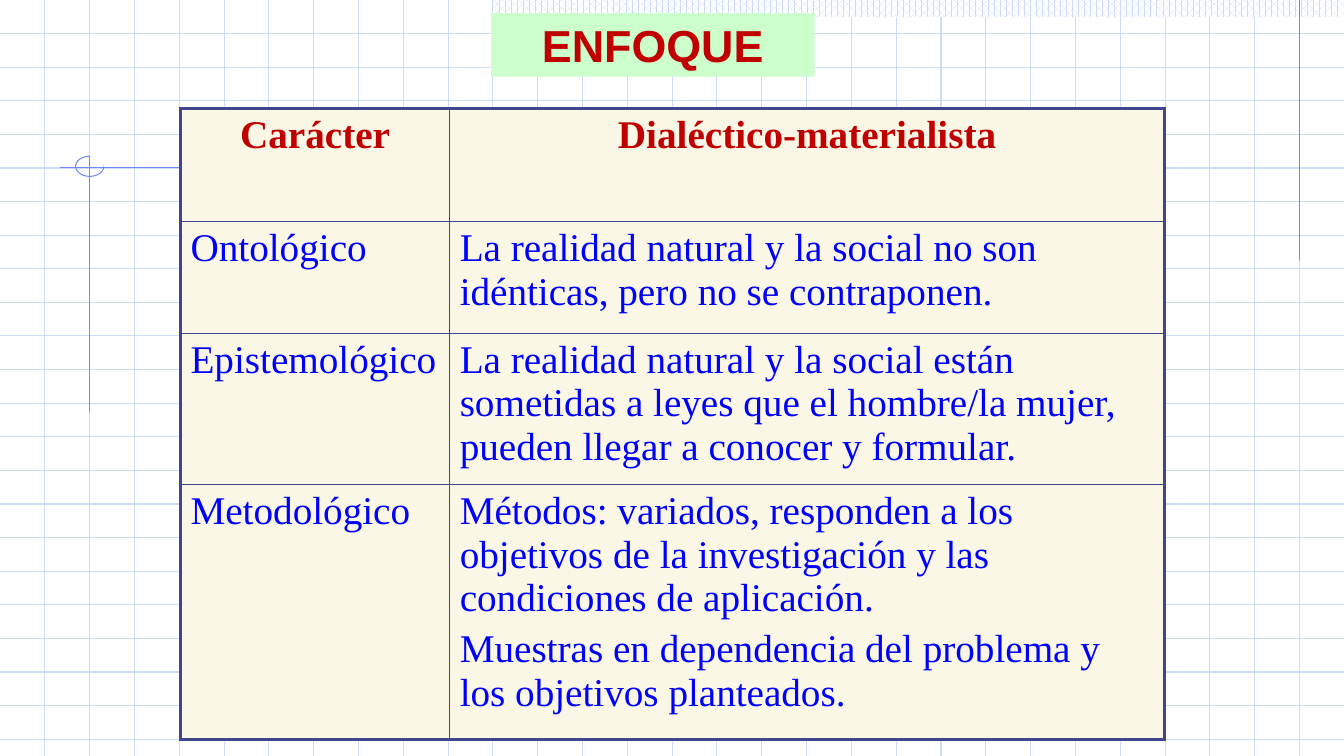
from math import cos, pi, sin

from lxml.etree import SubElement as Sub
from pptx import Presentation
from pptx.dml.color import RGBColor as RGB
from pptx.enum.dml import MSO_PATTERN as PAT
from pptx.enum.shapes import MSO_CONNECTOR as CON, MSO_SHAPE as SHP
from pptx.enum.text import MSO_ANCHOR as ANC, PP_ALIGN as AL
from pptx.oxml.ns import qn
from pptx.util import Inches, Pt

RED = RGB(0xC0, 0x00, 0x00)
BLUE = RGB(0x00, 0x00, 0xFF)
MINT = RGB(0xCC, 0xFF, 0xCC)
CREAM = RGB(0xFB, 0xF7, 0xE6)
NAVY = RGB(0x40, 0x45, 0x8C)
SKY = RGB(0x6F, 0x89, 0xF7)
PALE = RGB(0xCF, 0xDB, 0xFD)
WHITE = RGB(0xFF, 0xFF, 0xFF)

TITLE = {"name": "Arial", "size": Pt(32), "bold": True}
HEAD = {"name": "Times New Roman", "size": Pt(28), "bold": True}
BODY = {**HEAD, "bold": False}

WIDE, HIGH = 13.33, 7.5
COLS = [2.67, 7.09]
ROWS = [1.12, 1.11, 1.5, 2.53]
TEXTS = [
    ["Carácter", "Dialéctico-materialista"],
    ["Ontológico",
     "La realidad natural y la social no son idénticas, pero no se contraponen."],
    ["Epistemológico",
     "La realidad natural y la social están sometidas a leyes que el hombre/la mujer, "
     "pueden llegar a conocer y formular."],
    ["Metodológico",
     "Métodos: variados, responden a los objetivos de la investigación y las "
     "condiciones de aplicación.\n"
     "Muestras en dependencia del problema y los objetivos planteados."],
]


def style(para, form, color, align):
    para.alignment = align
    for key, val in form.items():
        setattr(para.font, key, val)
    para.font.color.rgb = color


def stroke(shape, color):
    shape.line.color.rgb = color
    shape.line.width = Pt(0.75)


def rect(slide, box):
    shape = slide.shapes.add_shape(SHP.RECTANGLE, *map(Inches, box))
    shape.shadow.inherit = False
    shape.line.fill.background()
    return shape


def rule(slide, ends, color=SKY):
    line = slide.shapes.add_connector(CON.STRAIGHT, *map(Inches, ends))
    stroke(line, color)
    Sub(line._element.spPr, qn("a:effectLst"))


def mesh(slide, box):
    x, y, w, h = box
    for i in range(1, 23):
        rule(slide, (x, y + i / 3, x + w, y + i / 3), PALE)
    for i in range(1, 30):
        rule(slide, (x + i * 4 / 9, y, x + i * 4 / 9, y + h), PALE)


def band(slide, box):
    x, y, w, h = box
    fill = rect(slide, box).fill
    fill.patterned()
    fill.pattern = PAT.PERCENT_60
    fill.fore_color.rgb = PALE
    fill.back_color.rgb = WHITE
    rule(slide, (x + 8, y, x + 8, y + 2.58))


def cross(slide, box):
    x, y, w, h = box
    rx, ry = 0.14, 0.1
    mid, axis = x + 0.29, y + 0.11
    rule(slide, (x + w, axis, x, axis))
    rule(slide, (mid, y, mid, y + h))
    turns = [-pi / 2 - 1.5 * pi * i / 36 for i in range(37)]
    dots = [(Inches(mid + rx * cos(t)), Inches(y + ry + ry * sin(t))) for t in turns]
    pen = slide.shapes.build_freeform(*dots[0])
    pen.add_line_segments(dots[1:], close=False)
    loop = pen.convert_to_shape()
    loop.shadow.inherit = False
    loop.fill.background()
    stroke(loop, SKY)


def title(slide, box):
    shape = rect(slide, box)
    shape.fill.solid()
    shape.fill.fore_color.rgb = MINT
    frame = shape.text_frame
    frame.word_wrap = True
    frame.vertical_anchor = ANC.MIDDLE
    frame.text = "ENFOQUE"
    style(frame.paragraphs[0], TITLE, RED, AL.CENTER)


def border(cell, outer):
    props = cell._tc.get_or_add_tcPr()
    for side, edge in outer.items():
        line = Sub(props, qn("a:ln" + side), w=str(Pt(2.25 if edge else 1)))
        Sub(Sub(line, qn("a:solidFill")), qn("a:srgbClr"), val=str(NAVY))


def grid(slide, box):
    table = slide.shapes.add_table(len(ROWS), len(COLS), *map(Inches, box)).table
    table.first_row = table.horz_banding = False
    for col, width in zip(table.columns, COLS):
        col.width = Inches(width)
    for r, texts in enumerate(TEXTS):
        table.rows[r].height = Inches(ROWS[r])
        look = (HEAD, RED, AL.CENTER) if r == 0 else (BODY, BLUE, AL.LEFT)
        for c, text in enumerate(texts):
            cell = table.cell(r, c)
            border(cell, {"L": c == 0, "R": c == len(COLS) - 1,
                          "T": r == 0, "B": r == len(ROWS) - 1})
            cell.fill.solid()
            cell.fill.fore_color.rgb = CREAM
            cell.text = text
            for i, para in enumerate(cell.text_frame.paragraphs):
                style(para, *look)
                if i:
                    para.space_before = Pt(5.6)


def main():
    deck = Presentation()
    deck.slide_width, deck.slide_height = Inches(WIDE), Inches(HIGH)
    slide = deck.slides.add_slide(deck.slide_layouts[6])
    mesh(slide, (0, 0, WIDE, HIGH))
    band(slide, (4.89, 0, 8.44, 0.17))
    cross(slide, (0.6, 1.55, 2.61, 2.54))
    title(slide, (4.87, 0.13, 3.21, 0.63))
    grid(slide, (1.79, 1.08, sum(COLS), sum(ROWS)))
    deck.save("out.pptx")


if __name__ == "__main__":
    main()
